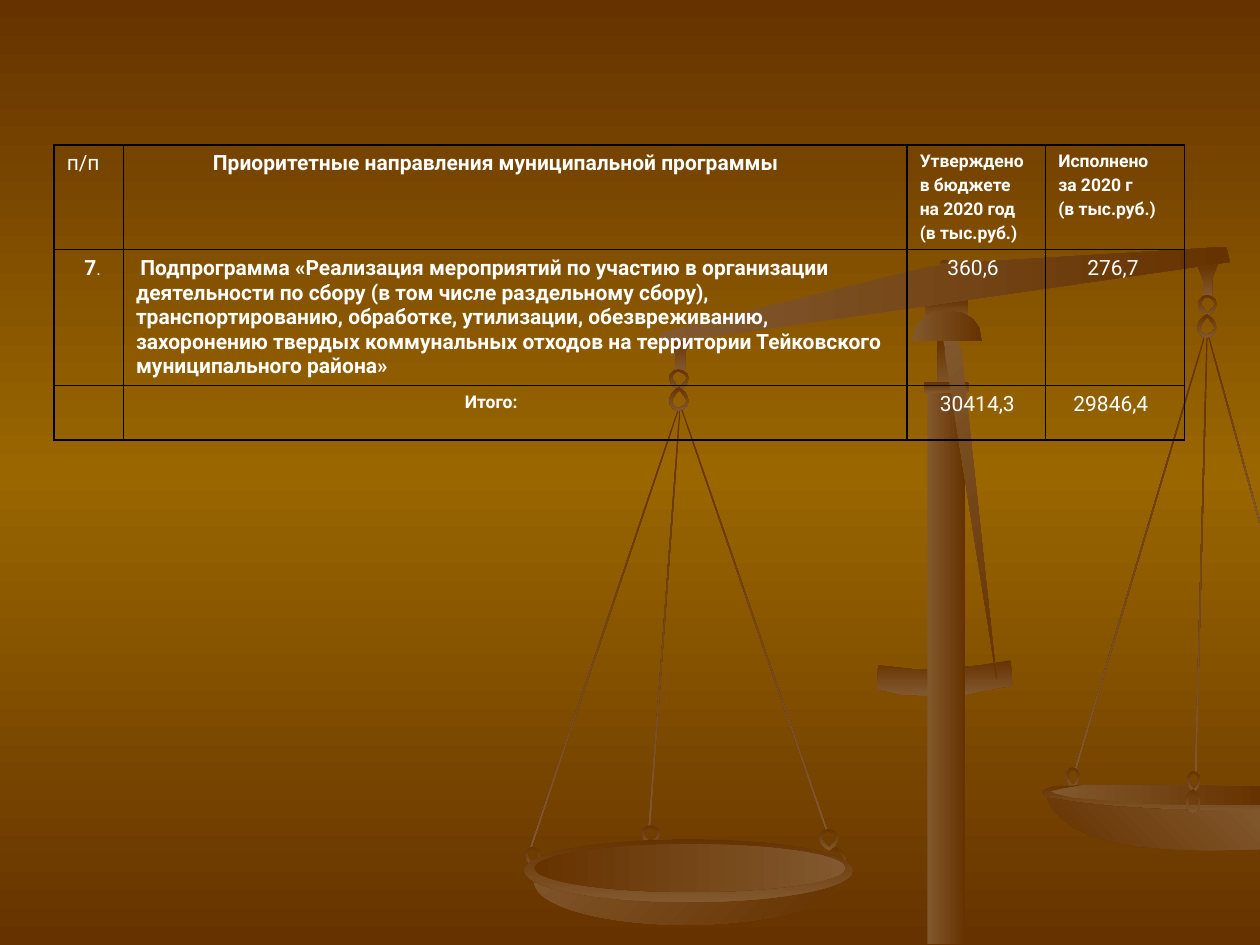
"""Build a budget programme table over a brown background with a pair of scales."""
from copy import deepcopy
from dataclasses import dataclass

from lxml import etree
from pptx import Presentation, util as u
from pptx.dml.color import RGBColor
from pptx.enum.shapes import MSO_SHAPE as kinds
from pptx.oxml import ns


@dataclass(frozen=True)
class Theme:
    font: str = "Roboto"
    dark: RGBColor = RGBColor(0x66, 0x33, 0x00)
    gold: RGBColor = RGBColor(0x99, 0x66, 0x00)
    text: RGBColor = RGBColor(0xFF, 0xFF, 0xFF)
    border: str = "000000"
    tint: int = 81569
    small: int = 10
    normal: int = 12


theme = Theme()


def paint(shape, angle, light_first):
    shape.shadow.inherit = False
    shape.line.fill.background()
    shape.fill.gradient()
    shape.fill.gradient_angle = (360 - angle) % 360
    for position, stop in enumerate(shape.fill.gradient_stops):
        stop.position = position
        stop.color.rgb = theme.dark
    colors = shape._element.xpath(".//a:gradFill//a:srgbClr")
    light = colors[0 if light_first else 1]
    for name in ("gamma", "tint", "invGamma"):
        effect = etree.SubElement(light, ns.qn(f"a:{name}"))
        if name == "tint":
            effect.set("val", str(theme.tint))


def draw_outline(parent, contours):
    scaled = [[(x * 100, y * 100) for x, y in contour] for contour in contours]
    builder = parent.shapes.build_freeform(*scaled[0][0], scale=u.Inches(1) / 10000)
    builder.add_line_segments(scaled[0][1:], close=True)
    for contour in scaled[1:]:
        builder.move_to(*contour[0])
        builder.add_line_segments(contour[1:], close=True)
    return builder.convert_to_shape()


presentation = Presentation()
presentation.slide_width = u.Inches(10)
presentation.slide_height = u.Inches(7.5)
slide = presentation.slides.add_slide(presentation.slide_layouts[6])

background = slide.background.fill
background.gradient()
background.gradient_angle = 270
for position, stop in enumerate(background.gradient_stops):
    stop.position = position
    stop.color.rgb = theme.dark
stop_list = slide._element.xpath(".//p:bg//a:gsLst")[0]
stop_list.insert(1, deepcopy(stop_list[0]))
middle = background.gradient_stops[1]
middle.position = 0.5
middle.color.rgb = theme.gold

ring_outer = [(50, 100), (80, 78), (97, 52), (100, 40), (92, 22), (70, 5), (45, 0),
              (25, 5), (5, 25), (0, 45), (12, 72), (32, 90)]
ring_inner = [(50, 12), (75, 22), (85, 35), (85, 48), (75, 62), (52, 85), (35, 72),
              (18, 48), (20, 28), (35, 14)]
crossbar = [(697, 528), (724, 531), (739, 531), (757, 530), (778, 528), (802, 524),
            (804, 544), (782, 548), (768, 551), (751, 552), (733, 552), (714, 551), (696, 547)]
right_rim = [(958, 624), (897, 624), (865, 623), (836, 624), (831, 626), (827, 628),
             (829, 631), (832, 633), (842, 636), (863, 639), (894, 642), (935, 644),
             (958, 645), (1000, 645), (1000, 626), (980, 626)]
right_bowl = [(831, 633), (835, 642), (842, 649), (852, 657), (865, 663), (882, 668),
              (903, 672), (928, 674), (957, 675), (1000, 674), (1000, 643), (953, 643),
              (918, 642), (886, 640), (857, 637)]
right_inside = [(956, 623), (862, 623), (843, 626), (834, 628), (838, 630), (852, 633),
                (878, 635), (912, 638), (955, 639), (1000, 639), (1000, 624), (968, 624)]
left_hook = [(549, 268), (531, 270), (536, 280), (536, 294), (544, 294), (544, 279)]
right_hook = [(967, 209), (950, 210), (955, 222), (955, 236), (962, 236), (962, 221)]
beam = [(973, 196), (976, 208), (525, 273), (524, 264), (737, 212), (759, 209)]
needle = [(791, 539), (750, 280), (750, 276), (748, 268), (760, 265), (761, 274), (763, 277)]
cap = [(752, 247), (763, 248), (772, 253), (777, 260), (779, 271), (724, 271),
       (726, 260), (732, 253), (740, 248)]

box, oval, rounded = kinds.RECTANGLE, kinds.OVAL, kinds.ROUNDED_RECTANGLE
scales_parts = [
    (box, (734, 237, 34, 18), 90, False, 0),
    (oval, (746, 206, 8, 8), 90, False, 0),
    (box, (904, 260, 1, 360), 90, False, 16.6),
    ("ring down", (846, 609, 11, 17), 90, False, 0),
    (box, (953, 266, 1, 347), 90, False, 1.5),
    (box, (979, 264, 1, 153), 90, False, 344.6),
    (box, (598, 315, 1, 353), 90, False, 341),
    (box, (479, 316, 1, 368), 90, False, 18.6),
    (box, (527, 325, 1, 331), 90, False, 4.2),
    ("outline", crossbar, 90, False, 0),
    ("outline", right_rim, 90, False, 0),
    ("outline", right_bowl, 315, False, 0),
    ("outline", right_inside, 0, True, 0),
    ("outline", left_hook, 90, False, 0),
    ("ring down", (531, 293, 16, 17), 90, False, 0),
    ("ring up", (531, 307, 16, 19), 90, False, 0),
    ("outline", right_hook, 90, False, 0),
    ("ring down", (951, 234, 15, 17), 90, False, 0),
    ("ring up", (950, 249, 16, 19), 90, False, 0),
    ("ring down", (942, 612, 11, 17), 90, False, 0),
    ("outline", beam, 0, True, 0),
    ("ring down", (509, 655, 15, 16), 90, False, 0),
    ("ring up", (656, 672, 16, 19), 90, False, 0),
    ("ring down", (417, 672, 12, 16), 90, False, 0),
    (oval, (424, 666, 240, 68), 45, True, 0),
    (oval, (416, 666, 261, 50), 90, False, 0),
    (oval, (424, 670, 247, 38), 0, False, 0),
    ("ring down", (650, 658, 16, 17), 90, False, 0),
    ("ring up", (941, 626, 12, 19), 90, False, 0),
    (box, (736, 308, 30, 441), 0, True, 0),
    (box, (744, 268, 13, 42), 90, False, 0),
    (rounded, (733, 303, 36, 9), 90, False, 0),
    ("outline", needle, 45, True, 0),
    ("outline", cap, 0, True, 0),
]
scales = slide.shapes.add_group_shape()
for kind, geometry, angle, light_first, rotation in scales_parts:
    if kind == "outline":
        shape = draw_outline(scales, [geometry])
    elif kind in ("ring down", "ring up"):
        left, top, width, height = geometry
        shape = draw_outline(scales, [
            [(left + width * x / 100,
              top + height * (y if kind == "ring down" else 100 - y) / 100) for x, y in contour]
            for contour in (ring_outer, ring_inner)])
    else:
        shape = scales.shapes.add_shape(kind, *(u.Inches(value / 100) for value in geometry))
        shape.rotation = rotation
    paint(shape, angle, light_first)

small, normal = theme.small, theme.normal
rows = [
    [(0.1, [[("п/п", normal, False)]]),
     (0.71, [[("Приоритетные направления муниципальной программы", normal, True)]]),
     (0.1, [[(line, small, True)] for line in
            ("Утверждено", "в бюджете", "на 2020 год", "(в тыс.руб.)")]),
     (0.1, [[(line, small, True)] for line in ("Исполнено", "за 2020 г", "(в тыс.руб.)")])],
    [(0.24, [[("7", normal, True), (".", small, False)]]),
     (0.1, [[(" ", small, False),
             ("Подпрограмма «Реализация мероприятий по участию в организации деятельности "
              "по сбору (в том числе раздельному сбору), транспортированию, обработке, "
              "утилизации, обезвреживанию, захоронению твердых коммунальных отходов на "
              "территории Тейковского муниципального района»", normal, True)]]),
     (0.32, [[("360,6", normal, False)]]),
     (0.33, [[("276,7", normal, False)]])],
    [(0.1, []),
     (2.71, [[("Итого:", small, True)]]),
     (0.26, [[("30414,3", normal, False)]]),
     (0.22, [[("29846,4", normal, False)]])],
]
column_widths, row_heights = (0.55, 6.22, 1.1, 1.1), (0.83, 1.08, 0.43)
table = slide.shapes.add_table(
    len(rows), len(column_widths), u.Inches(0.43), u.Inches(1.15),
    u.Inches(sum(column_widths)), u.Inches(sum(row_heights))).table
table.first_row = table.horz_banding = False
for column, width in zip(table.columns, column_widths):
    column.width = u.Inches(width)
for row, height, contents in zip(table.rows, row_heights, rows):
    row.height = u.Inches(height)
    for cell, (indent, paragraphs) in zip(row.cells, contents):
        cell.margin_left = u.Inches(indent)
        properties = cell._tc.get_or_add_tcPr()
        for side in ("lnL", "lnR", "lnT", "lnB"):
            line = etree.SubElement(properties, ns.qn(f"a:{side}"), w=str(u.Pt(1)))
            line_fill = etree.SubElement(line, ns.qn("a:solidFill"))
            etree.SubElement(line_fill, ns.qn("a:srgbClr"), val=theme.border)
        cell.fill.background()
        for index, runs in enumerate(paragraphs):
            paragraph = cell.text_frame.add_paragraph() if index else cell.text_frame.paragraphs[0]
            if index:
                paragraph.space_before = u.Pt(2)
            for words, size, bold in runs:
                run = paragraph.add_run()
                run.text = words
                run.font.name, run.font.size, run.font.bold = theme.font, u.Pt(size), bold
                run.font.color.rgb = theme.text

presentation.save("out.pptx")
